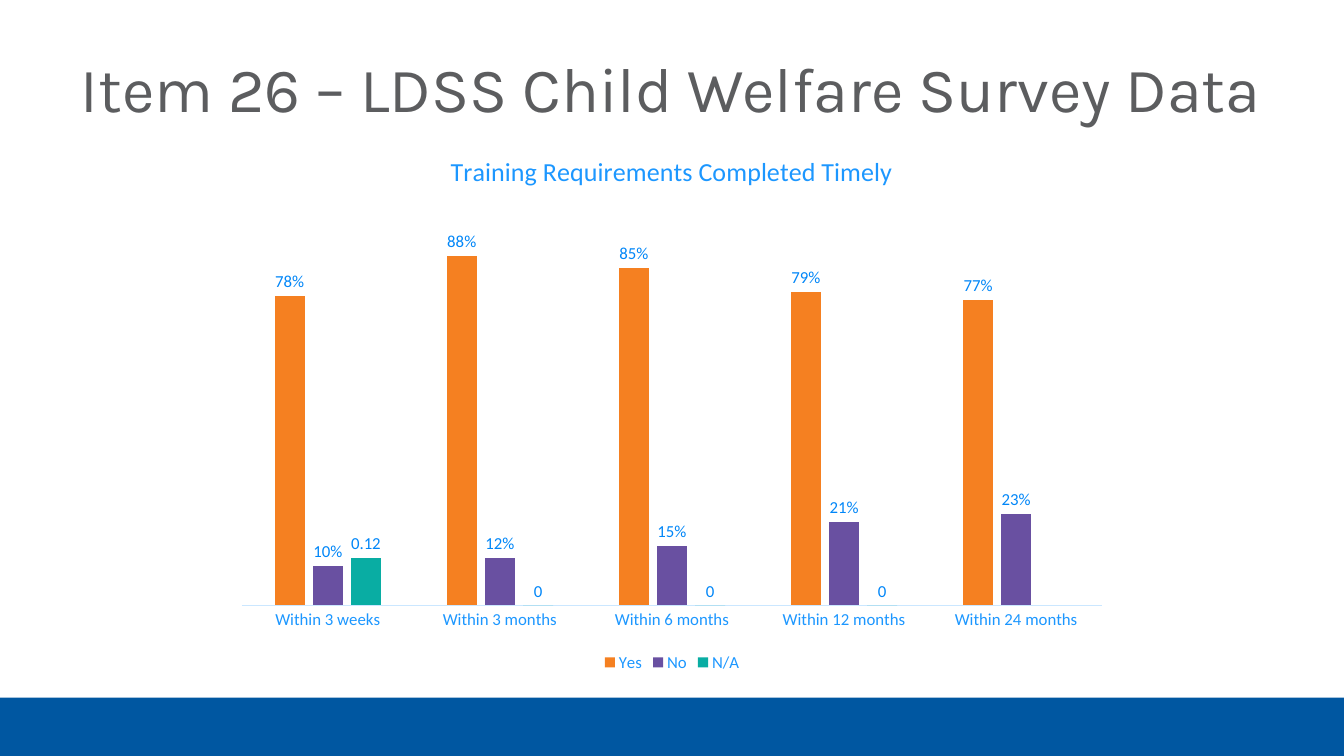
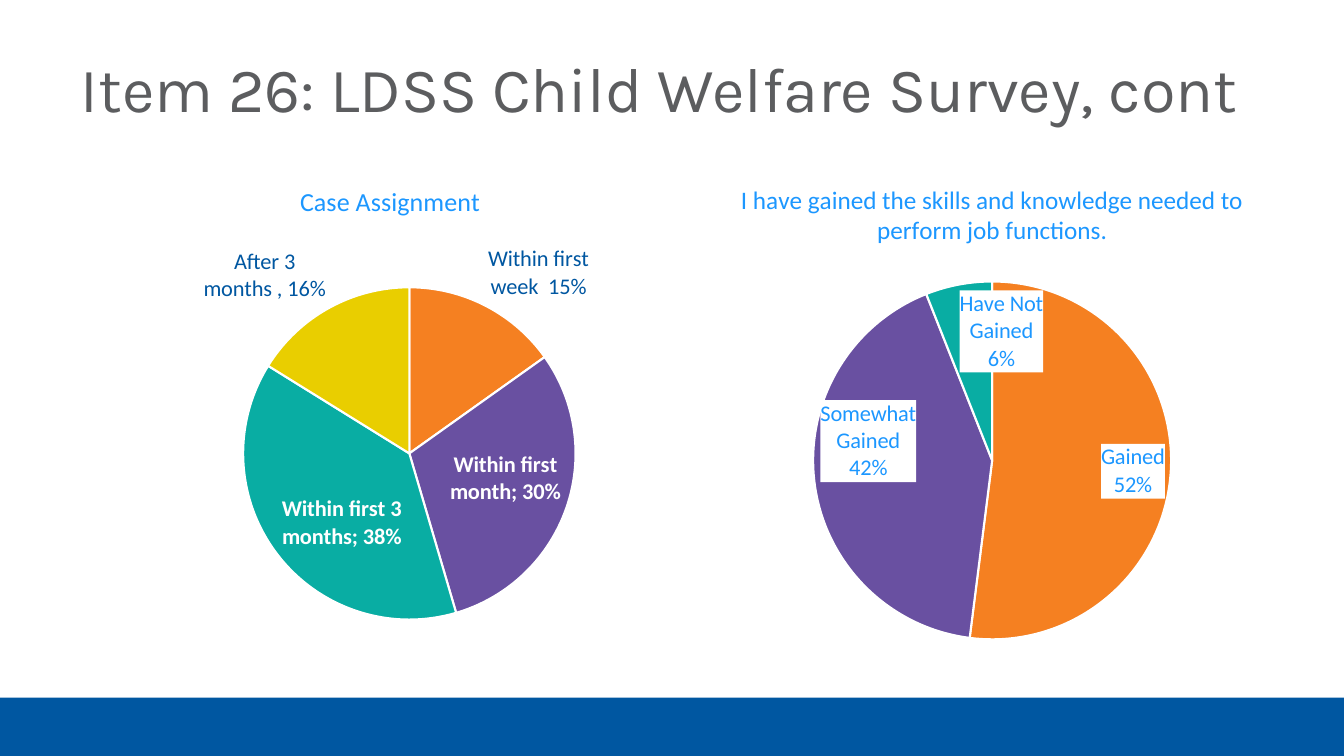
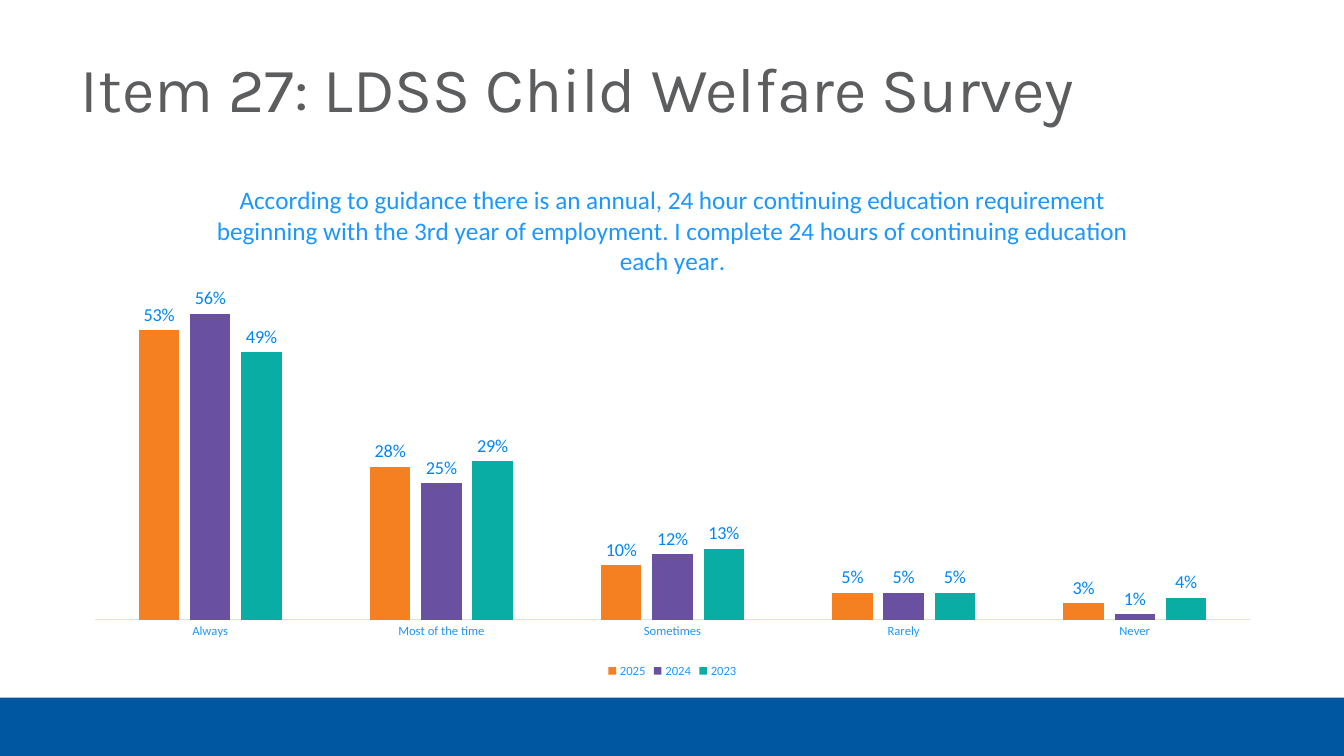
"""Build three slides of child welfare survey charts."""
from lxml import etree
from pptx import Presentation
from pptx.chart import data as cd
from pptx.dml.color import RGBColor
from pptx.enum import chart as ec, shapes as es
from pptx.oxml import ns, parse_xml
from pptx.text.text import Font
from pptx.util import Inches, Pt

BLUE, SKY, LABEL, PALE = "0057A1", "1C97FF", "0086F8", "CBE7FF"
GREY, WHITE = "5C5D5F", "FFFFFF"
HUES = ["F58021", "6950A1", "09ADA3", "E9CE00"]
OUT, IN = ec.XL_LABEL_POSITION.OUTSIDE_END, ec.XL_LABEL_POSITION.INSIDE_END


def rgb(code):
    return RGBColor.from_string(code)


def style(font, size, color, name="Calibri", bold=False):
    form = {"size": Pt(size), "name": name, "bold": bold}
    for key, val in form.items():
        setattr(font, key, val)
    font.color.rgb = rgb(color)


prs = Presentation()
prs.slide_width, prs.slide_height = Inches(13.33), Inches(7.5)
master = prs.slide_master
only = prs.slide_layouts[5]

head = master.placeholders[0]
place = {"left": 0.7, "top": 0.37, "width": 11.94, "height": 1.08}
for key, val in place.items():
    setattr(head, key, Inches(val))
level = master.element.find(".//" + ns.qn("p:titleStyle")).find(ns.qn("a:lvl1pPr"))
level.set("algn", "l")
level.insert(0, parse_xml(f'<a:lnSpc {ns.nsdecls("a")}><a:spcPct val="90000"/></a:lnSpc>'))
style(Font(level.find(ns.qn("a:defRPr"))), 45, GREY, "Karla")

heads = [
    "Item 26 – LDSS Child Welfare Survey Data",
    "Item 26: LDSS Child Welfare Survey, cont",
    "Item 27: LDSS Child Welfare Survey",
]
slides = []
for name in heads:
    slide = prs.slides.add_slide(only)
    slide.shapes.title.text = name
    slides.append(slide)

band = slides[0].shapes.add_shape(
    es.MSO_SHAPE.RECTANGLE, 0, Inches(6.92), prs.slide_width, Inches(0.58))
band.shadow.inherit = False
band.fill.solid()
band.fill.fore_color.rgb = rgb(BLUE)
band.line.fill.background()
master.shapes._spTree.insert(2, band._element)

charts = [
    {"page": 0, "at": (2.22, 1.31, 8.89, 5.4), "plot": (0.02, 0.14, 0.96, 0.73),
     "title": "Training Requirements Completed Timely", "size": 18.6,
     "cats": ["Within 3 weeks", "Within 3 months", "Within 6 months",
              "Within 12 months", "Within 24 months"],
     "rows": {"Yes": [0.78, 0.88, 0.85, 0.79, 0.77],
              "No": [0.1, 0.12, 0.15, 0.21, 0.23],
              "N/A": [0.12, 0, 0, 0, None]},
     "max": 1, "text": 12, "label": 12},
    {"page": 1, "at": (0.7, 1.61, 6.34, 5.16), "plot": (0.27, 0.24, 0.52, 0.64),
     "title": "Case Assignment", "size": 18.6,
     "cats": ["Within first week", "Within first month",
              "Within first 3 months", "After 3 months "],
     "rows": {"Case Assignment": [0.15, 0.3, 0.38, 0.16]},
     "ink": WHITE, "gap": "; ", "outer": {0: "  ", 3: ", "}},
    {"page": 1, "at": (6.67, 1.61, 6.34, 4.89), "plot": (0.22, 0.24, 0.56, 0.73),
     "title": "I have gained the skills and knowledge needed to perform job functions.",
     "size": 18, "cats": ["Gained", "Somewhat Gained", "Have Not Gained"],
     "rows": {"Series 1": [52, 42, 6]},
     "ink": SKY, "gap": "\n", "outer": {}},
    {"page": 2, "at": (0.7, 1.61, 11.94, 5.16), "plot": (0.02, 0.25, 0.96, 0.63),
     "title": "According to guidance there is an annual, 24 hour continuing education "
              "requirement beginning with the 3rd year of employment. I complete 24 hours "
              "of continuing education each year.",
     "size": 18, "cats": ["Always", "Most of the time", "Sometimes", "Rarely", "Never"],
     "rows": {"2025": [0.53, 0.28, 0.1, 0.05, 0.03],
              "2024": [0.56, 0.25, 0.12, 0.05, 0.01],
              "2023": [0.49, 0.29, 0.13, 0.05, 0.04]},
     "max": 0.6, "text": 9, "label": 13},
]

for item in charts:
    bars = "max" in item
    kind = ec.XL_CHART_TYPE.COLUMN_CLUSTERED if bars else ec.XL_CHART_TYPE.PIE
    data = cd.CategoryChartData()
    data.categories = item["cats"]
    for name, vals in item["rows"].items():
        data.add_series(name, vals)
    frame = slides[item["page"]].shapes.add_chart(
        kind, *[Inches(n) for n in item["at"]], data)
    chart = frame.chart
    style(chart.font, 10, BLUE)
    chart.has_title = True
    title = chart.chart_title.text_frame
    title.text = item["title"]
    style(title.paragraphs[0].runs[0].font, item["size"], SKY)
    chart.has_legend = bars

    area = chart._chartSpace.chart.plotArea
    for old in area.findall(ns.qn("c:layout")):
        area.remove(old)
    edges = "".join(f'<c:{k} val="{v}"/>' for k, v in zip("xywh", item["plot"]))
    area.insert(0, parse_xml(
        f'<c:layout {ns.nsdecls("c")}><c:manualLayout><c:layoutTarget val="inner"/>'
        f'<c:xMode val="edge"/><c:yMode val="edge"/>{edges}</c:manualLayout></c:layout>'))

    plot = chart.plots[0]
    plot.vary_by_categories = not bars
    if bars:
        plot.gap_width, plot.overlap = 219, -27
        chart.legend.position = ec.XL_LEGEND_POSITION.BOTTOM
        chart.legend.include_in_layout = False
        style(chart.legend.font, item["text"], SKY)
        cat, val = chart.category_axis, chart.value_axis
        cat.major_tick_mark = ec.XL_TICK_MARK.NONE
        style(cat.tick_labels.font, item["text"], SKY)
        cat.format.line.color.rgb = rgb(PALE)
        cat.format.line.width = Pt(0.75)
        val.minimum_scale, val.maximum_scale = 0, item["max"]
        val.has_major_gridlines = False
        val.tick_labels.number_format = "0%"
        val.tick_labels.number_format_is_linked = False
        val.visible = False
        for row, hue in zip(plot.series, HUES):
            row.format.fill.solid()
            row.format.fill.fore_color.rgb = rgb(hue)
            tags = row.data_labels
            style(tags.font, item["label"], LABEL)
            tags.number_format = "General" if row.name == "N/A" else "0%"
            tags.number_format_is_linked = False
            tags.show_value = True
            tags.position = OUT
        continue

    share = item["ink"] == SKY
    pie = plot.series[0]
    for i in range(len(item["cats"])):
        part = pie.points[i].format
        part.fill.solid()
        part.fill.fore_color.rgb = rgb(HUES[i])
        part.line.color.rgb = rgb(WHITE)
        part.line.width = Pt(1.5)
    tags = pie.data_labels
    style(tags.font, 16, item["ink"], bold=not share)
    tags.number_format, tags.number_format_is_linked = "0%", False
    tags.show_category_name = True
    tags.show_percentage, tags.show_value = share, not share
    tags.position = IN
    root = tags._element
    if share:
        root.find(ns.qn("c:txPr")).addprevious(parse_xml(
            f'<c:spPr {ns.nsdecls("c", "a")}><a:solidFill><a:srgbClr val="{WHITE}"/>'
            '</a:solidFill></c:spPr>'))
    for i in item["outer"]:
        tag = pie.points[i].data_label
        style(tag.font, 16, BLUE)
        tag.position = OUT
    gaps = [item["gap"], *item["outer"].values()]
    for node, gap in zip([root, *root.findall(ns.qn("c:dLbl"))], gaps):
        node.find(ns.qn("c:showCatName")).set("val", "1")
        mark = etree.Element(ns.qn("c:separator"))
        mark.text = gap
        last = [n for n in node if n.tag in (ns.qn("c:showPercent"), ns.qn("c:showBubbleSize"))][-1]
        last.addnext(mark)
        if node is not root:
            node.find(ns.qn("c:txPr")).addprevious(parse_xml(
                f'<c:numFmt {ns.nsdecls("c")} formatCode="0%" sourceLinked="0"/>'))
    for body in root.iter(ns.qn("a:bodyPr")):
        body.set("wrap", "square")

prs.save("out.pptx")
